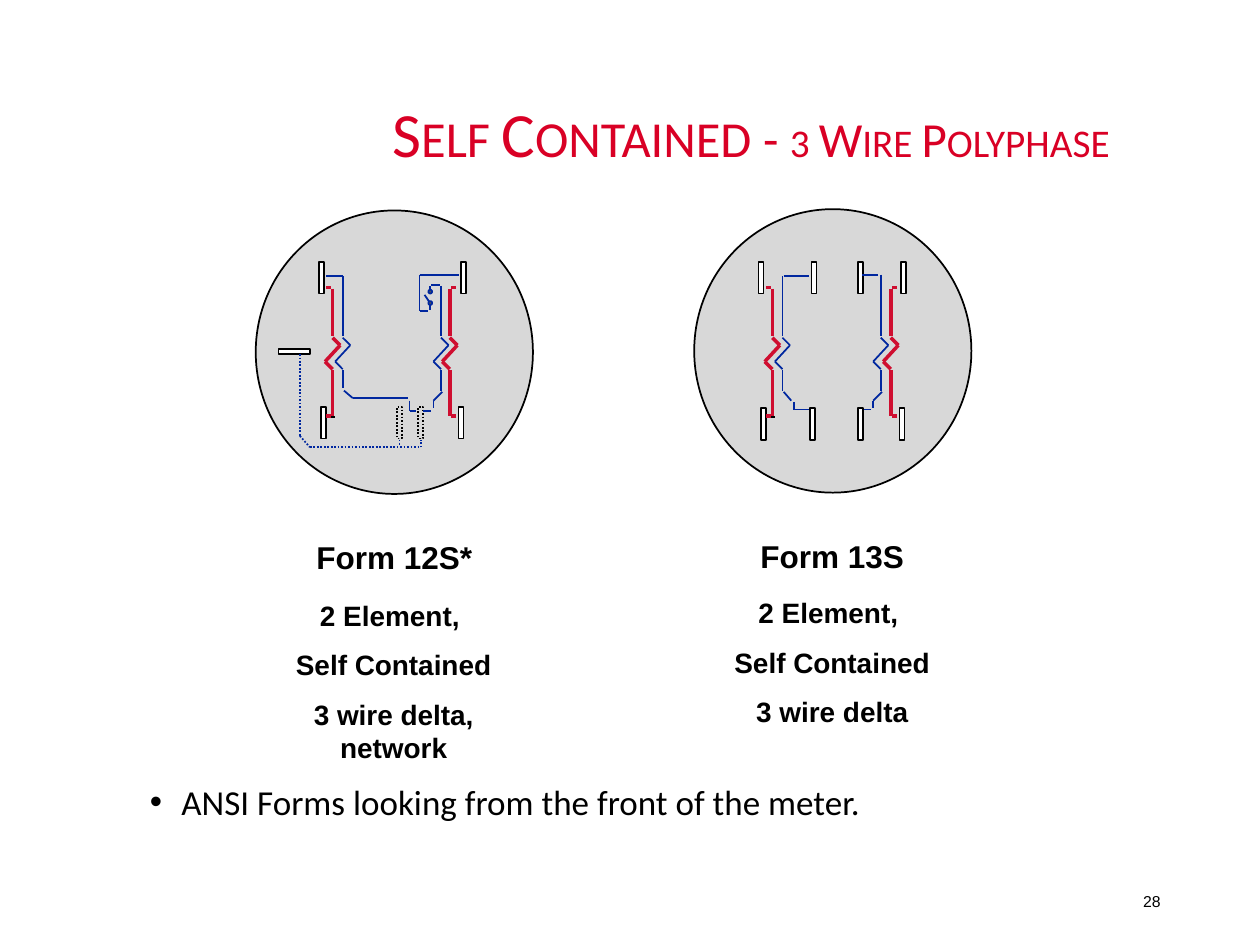
from dataclasses import dataclass

import lxml.etree
import pptx
import pptx.dml.color
import pptx.enum.dml
import pptx.enum.shapes
import pptx.enum.text
import pptx.oxml.ns
import pptx.util

Inches, Pt = pptx.util.Inches, pptx.util.Pt
Shape = pptx.enum.shapes.MSO_SHAPE
Align = pptx.enum.text.PP_ALIGN
Anchor = pptx.enum.text.MSO_ANCHOR
AutoSize = pptx.enum.text.MSO_AUTO_SIZE
DOTTED = pptx.enum.dml.MSO_LINE.ROUND_DOT

COLORS = {
    "title": "D90025",
    "text": "000000",
    "face": "D8D8D8",
    "outline": "000000",
    "blade": "FFFFFF",
    "current": "CF0E30",
    "voltage": "00279F",
    "contact": "4C5055",
}
BLADE_WIDTH, BLADE_HEIGHT = 0.04, 0.25
CONTACT_SIZE = 0.03


@dataclass
class Box:
    left: float
    top: float
    width: float
    height: float


@dataclass
class Coil:
    """A vertical winding with a zigzag halfway; side is where its blades sit."""
    x: float
    top: float
    bottom: float
    side: int = 0
    color: str = "voltage"
    weight: float = 1


@dataclass
class Wire:
    points: list[tuple[float, float]]
    color: str = "voltage"
    weight: float = 1
    dotted: bool = False


@dataclass
class Meter:
    face: Box
    blades: list[Box]
    coils: list[Coil]
    wires: list[Wire]
    name: str
    name_box: Box
    details: list[str]
    details_box: Box
    dotted_blades: list[Box]
    contacts: list[Box]


def blade(left: float, top: float) -> Box:
    return Box(left, top, BLADE_WIDTH, BLADE_HEIGHT)


def contact(left: float, top: float) -> Box:
    return Box(left, top, CONTACT_SIZE, CONTACT_SIZE)


def current_coil(x: float, side: int) -> Coil:
    return Coil(x, 2.29, 3.3, side, "current", 2)


def rgb(name: str) -> pptx.dml.color.RGBColor:
    return pptx.dml.color.RGBColor.from_string(COLORS[name])


def lengths(box: Box) -> list[int]:
    return [Inches(v) for v in (box.left, box.top, box.width, box.height)]


def place(shape, box: Box) -> None:
    shape.left, shape.top, shape.width, shape.height = lengths(box)


def draw_shape(group, kind, box: Box, fill: str, line: str = "outline", dotted: bool = False) -> None:
    shape = group.shapes.add_shape(kind, *lengths(box))
    shape.shadow.inherit = False
    shape.fill.solid()
    shape.fill.fore_color.rgb = rgb(fill)
    shape.line.color.rgb = rgb(line)
    shape.line.width = Pt(1)
    if dotted:
        shape.line.dash_style = DOTTED


def draw_wire(group, wire: Wire) -> None:
    for start, end in zip(wire.points, wire.points[1:]):
        segment = group.shapes.add_connector(
            pptx.enum.shapes.MSO_CONNECTOR.STRAIGHT, *[Inches(v) for v in (*start, *end)])
        segment.line.color.rgb = rgb(wire.color)
        segment.line.width = Pt(wire.weight)
        if wire.dotted:
            segment.line.dash_style = DOTTED
        lxml.etree.SubElement(segment._element.spPr, pptx.oxml.ns.qn("a:effectLst"))


def draw_coil(group, coil: Coil) -> None:
    x = coil.x
    parts = [
        [(x, coil.top), (x, 2.67)],
        [(x, 2.68), (x + 0.06, 2.74), (x - 0.06, 2.87), (x, 2.93)],
        [(x, 2.94), (x, coil.bottom)],
    ]
    if coil.side:
        parts += [[(x + coil.side * 0.05, y), (x + coil.side * 0.01, y)] for y in (2.28, 3.3)]
    for points in parts:
        draw_wire(group, Wire(points, coil.color, coil.weight))


def draw_text(slide, box: Box, lines: list[str], size: float, bold: bool = True,
              align=Align.CENTER, anchor=Anchor.TOP, auto_size=AutoSize.SHAPE_TO_FIT_TEXT) -> None:
    frame = slide.shapes.add_textbox(*lengths(box)).text_frame
    frame.word_wrap = True
    frame.auto_size = auto_size
    frame.vertical_anchor = anchor
    for index, line in enumerate(lines):
        paragraph = frame.add_paragraph() if index else frame.paragraphs[0]
        paragraph.text = line
        paragraph.alignment = align
        if index:
            paragraph.space_before = Pt(9)
        set_font(paragraph, "Arial", "text", size, bold)


def set_font(paragraph, name: str, color: str, size: float, bold: bool = False) -> None:
    paragraph.font.name = name
    paragraph.font.size = Pt(size)
    paragraph.font.bold = bold
    paragraph.font.color.rgb = rgb(color)


def draw_meter(slide, meter: Meter) -> None:
    group = slide.shapes.add_group_shape()
    draw_shape(group, Shape.OVAL, meter.face, "face")
    for box in meter.blades:
        draw_shape(group, Shape.RECTANGLE, box, "blade")
    for box in meter.dotted_blades:
        draw_shape(group, Shape.RECTANGLE, box, "face", dotted=True)
    for wire in meter.wires:
        draw_wire(group, wire)
    for coil in meter.coils:
        draw_coil(group, coil)
    for box in meter.contacts:
        draw_shape(group, Shape.OVAL, box, "contact", "voltage")
    draw_text(slide, meter.name_box, [meter.name], 18)
    draw_text(slide, meter.details_box, meter.details, 16)


FORM_12S = Meter(
    face=Box(2.03, 1.67, 2.2, 2.25),
    blades=[blade(2.53, 2.08), blade(3.66, 2.08), blade(2.55, 3.23), blade(3.64, 3.23),
            Box(2.21, 2.77, BLADE_HEIGHT, BLADE_WIDTH)],
    dotted_blades=[blade(3.15, 3.23), blade(3.32, 3.23)],
    coils=[current_coil(2.64, -1), current_coil(3.57, 1),
           Coil(2.72, 2.19, 3.08), Coil(3.5, 2.27, 3.1)],
    wires=[
        Wire([(2.59, 3.31), (2.66, 3.31)], "outline"),
        Wire([(2.59, 2.19), (2.72, 2.19)]),
        Wire([(2.73, 3.1), (2.8, 3.16), (3.24, 3.16)]),
        Wire([(3.25, 3.18), (3.25, 3.26), (3.3, 3.26)]),
        Wire([(3.51, 3.11), (3.44, 3.18), (3.44, 3.24)]),
        Wire([(3.42, 3.26), (3.36, 3.26)]),
        # Test link with its open switch
        Wire([(3.64, 2.18), (3.33, 2.18), (3.33, 2.47), (3.4, 2.47)]),
        Wire([(3.41, 2.46), (3.41, 2.4), (3.37, 2.34)]),
        Wire([(3.49, 2.26), (3.42, 2.26)]),
        Wire([(3.41, 2.27), (3.41, 2.3)]),
        # Alternative connection to the side blade
        Wire([(2.38, 2.81), (2.38, 3.46), (2.46, 3.55), (3.34, 3.55), (3.34, 3.49)], dotted=True),
        Wire([(3.17, 3.49), (3.17, 3.53)], dotted=True),
    ],
    contacts=[contact(3.4, 2.3), contact(3.4, 2.39)],
    name="Form 12S*", name_box=Box(2.38, 4.22, 1.5, 0.4),
    details=["2 Element, ", "Self Contained", "3 wire delta, network"],
    details_box=Box(2.21, 4.7, 1.83, 1.44),
)
FORM_13S = Meter(
    face=Box(5.51, 1.66, 2.2, 2.25),
    blades=[blade(x, 2.08) for x in (6.02, 6.44, 6.81, 7.15)]
    + [blade(x, 3.24) for x in (6.04, 6.43, 6.81, 7.14)],
    dotted_blades=[],
    coils=[current_coil(6.13, -1), current_coil(7.07, 1),
           Coil(6.21, 2.19, 3.1), Coil(6.99, 2.18, 3.1)],
    wires=[
        Wire([(6.09, 3.31), (6.15, 3.31)], "outline"),
        Wire([(6.22, 2.19), (6.42, 2.19)]),
        Wire([(6.22, 3.11), (6.28, 3.18)]),
        Wire([(6.3, 3.19), (6.3, 3.25), (6.42, 3.25)]),
        Wire([(6.97, 2.18), (6.84, 2.18)]),
        Wire([(7, 3.11), (6.93, 3.18), (6.93, 3.24)]),
        Wire([(6.91, 3.25), (6.86, 3.25)]),
    ],
    contacts=[],
    name="Form 13S", name_box=Box(5.92, 4.21, 1.37, 0.4),
    details=["2 Element, ", "Self Contained", "3 wire delta"],
    details_box=Box(5.69, 4.68, 1.83, 1.17),
)


def write_title(title) -> None:
    place(title, Box(1.08, 0.42, 7.83, 1.33))
    title.text_frame.auto_size = AutoSize.NONE
    title.text_frame.vertical_anchor = Anchor.MIDDLE
    heading = title.text_frame.paragraphs[0]
    heading.alignment = Align.RIGHT
    heading.line_spacing = 0.9
    set_font(heading, "Calibri", "title", 36)
    for words, size in (("Self Contained - ", 36), ("3 Wire Polyphase", 28)):
        run = heading.add_run()
        run.text = words
        run.font.size = Pt(size)
        run._r.get_or_add_rPr().set("cap", "small")


def write_note(body) -> None:
    place(body, Box(1.09, 6.18, 7.83, 0.46))
    body.text_frame.auto_size = AutoSize.NONE
    note = body.text_frame.paragraphs[0]
    note.text = "ANSI Forms looking from the front of the meter."
    note.line_spacing = 0.9
    note.space_before = Pt(0)
    properties = note._p.get_or_add_pPr()
    properties.set("marL", str(Inches(0.25)))
    properties.set("indent", str(-Inches(0.25)))
    lxml.etree.SubElement(properties, pptx.oxml.ns.qn("a:buChar")).set("char", "•")
    set_font(note, "Calibri", "text", 20)


def main() -> None:
    deck = pptx.Presentation()
    deck.slide_width, deck.slide_height = Inches(10), Inches(7.5)
    slide = deck.slides.add_slide(deck.slide_layouts[1])
    write_title(slide.shapes.title)
    write_note(slide.placeholders[1])
    for meter in (FORM_12S, FORM_13S):
        draw_meter(slide, meter)
    # Page number
    draw_text(slide, Box(7.06, 6.95, 2.25, 0.4), ["28"], 9, False,
              Align.RIGHT, Anchor.MIDDLE, AutoSize.NONE)
    deck.save("out.pptx")


if __name__ == "__main__":
    main()
